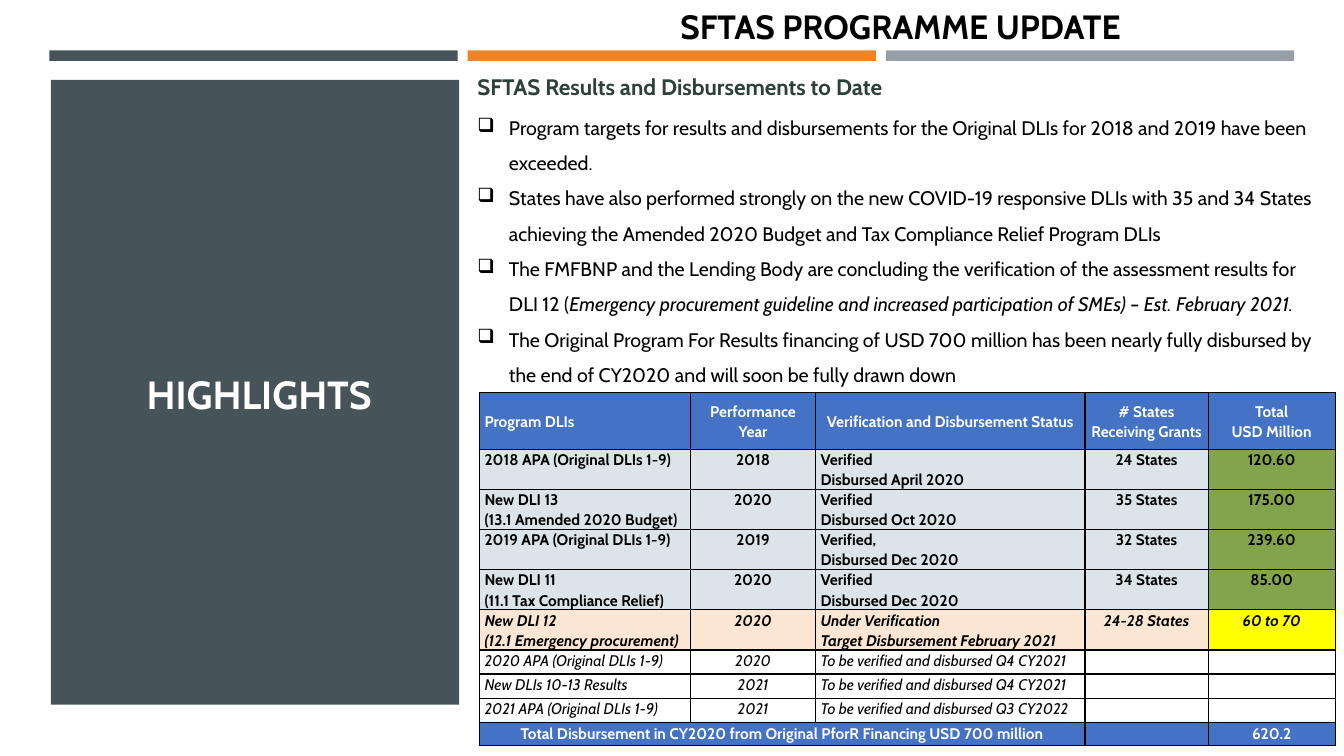
from lxml import etree
from pptx import Presentation
from pptx.dml.color import RGBColor
from pptx.enum.shapes import MSO_SHAPE
from pptx.enum.text import MSO_ANCHOR, PP_ALIGN
from pptx.oxml.ns import qn
from pptx.util import Pt

RECTANGLE = MSO_SHAPE.RECTANGLE
LEFT, CENTER, JUSTIFY = PP_ALIGN.LEFT, PP_ALIGN.CENTER, PP_ALIGN.JUSTIFY
TOP, MIDDLE = MSO_ANCHOR.TOP, MSO_ANCHOR.MIDDLE
FONT = "Cabin"
COLORS = {
    "slate": "465359", "orange": "ED8428", "gray": "969FA7",
    "white": "FFFFFF", "black": "000000", "heading": "2D4039",
    "blue": "4472C4", "pale": "DBE4E8", "green": "84A44B",
    "peach": "FBE6D4", "yellow": "FFFF00",
}


def style(paragraph, size, color, bold=False, italic=False, align=LEFT):
    paragraph.alignment = align
    font = paragraph.font
    font.name, font.size, font.bold, font.italic = FONT, Pt(size), bold, italic
    font.color.rgb = RGBColor.from_string(COLORS[color])


def add_text_frame(left, top, width, height, anchor=TOP):
    frame = slide.shapes.add_textbox(Pt(left), Pt(top), Pt(width), Pt(height)).text_frame
    frame.word_wrap = True
    frame.vertical_anchor = anchor
    return frame


prs = Presentation()
prs.slide_width, prs.slide_height = Pt(960), Pt(540)
slide = prs.slides.add_slide(prs.slide_layouts[6])

# Three accent bars and the side panel
BAR_STEP = 298.8
bars = [(35.3 + i * BAR_STEP, 36, 291.6, 7.5, color)
        for i, color in enumerate(["slate", "orange", "gray"])]
side_panel = (36.3, 57, 291.6, 446.4, "slate")
for left, top, width, height, color in bars + [side_panel]:
    block = slide.shapes.add_shape(RECTANGLE, Pt(left), Pt(top), Pt(width), Pt(height))
    block.shadow.inherit = False
    block.fill.solid()
    block.fill.fore_color.rgb = RGBColor.from_string(COLORS[color])
    block.line.fill.background()

# Titles
highlights = add_text_frame(63.4, 95, 243.4, 373, MIDDLE).paragraphs[0]
highlights.text = "HIGHLIGHTS"
style(highlights, 28, "white", bold=True, align=CENTER)

programme_title = add_text_frame(403.2, 0.7, 480, 36).paragraphs[0]
programme_title.text = "SFTAS PROGRAMME UPDATE"
style(programme_title, 24, "black", bold=True, align=CENTER)

results_heading = add_text_frame(334, 48.6, 384.5, 36).paragraphs[0]
results_heading.text = "SFTAS Results and Disbursements to Date"
results_heading.space_after = Pt(6)
style(results_heading, 16, "heading", bold=True, align=JUSTIFY)

# Results table: each row is (height, style, cells)
HEADER, DONE, PENDING, FUTURE, TOTAL = "header", "done", "pending", "future", "total"
# fill, fill of last column, text colour, bold, italic, anchor
ROW_STYLES = {
    HEADER: ("blue", "blue", "white", True, False, MIDDLE),
    DONE: ("pale", "green", "black", True, False, TOP),
    PENDING: ("peach", "yellow", "black", True, True, TOP),
    FUTURE: ("white", "white", "black", False, True, TOP),
    TOTAL: ("blue", "blue", "white", True, False, MIDDLE),
}
rows = [
    (40.4, HEADER, ["Program DLIs", "Performance Year", "Verification and Disbursement Status",
                    "# States Receiving Grants", "Total\nUSD Million"]),
    (28.7, DONE, ["2018 APA (Original DLIs 1-9)", "2018",
                  "Verified\nDisbursed April 2020", "24 States", "120.60"]),
    (28.7, DONE, ["New DLI 13\n(13.1 Amended 2020 Budget)", "2020",
                  "Verified\nDisbursed Oct 2020", "35 States", "175.00"]),
    (28.7, DONE, ["2019 APA (Original DLIs 1-9)", "2019",
                  "Verified,\nDisbursed Dec 2020", "32 States", "239.60"]),
    (28.7, DONE, ["New DLI 11\n(11.1 Tax Compliance Relief)", "2020",
                  "Verified\nDisbursed Dec 2020", "34 States", "85.00"]),
    (28.7, PENDING, ["New DLI 12\n(12.1 Emergency procurement)", "2020",
                     "Under Verification\nTarget Disbursement February 2021",
                     "24-28 States", "60 to 70"]),
    (17.2, FUTURE, ["2020 APA (Original DLIs 1-9)", "2020",
                    "To be verified and disbursed Q4 CY2021", "", ""]),
    (17.2, FUTURE, ["New DLIs 10-13 Results", "2021",
                    "To be verified and disbursed Q4 CY2021", "", ""]),
    (17.2, FUTURE, ["2021 APA (Original DLIs 1-9)", "2021",
                    "To be verified and disbursed Q3 CY2022", "", ""]),
    (16.5, TOTAL, ["Total Disbursement in CY2020 from Original PforR Financing USD 700 million",
                   "", "", "", "620.2"]),
]
column_widths = [150.8, 89.3, 192.4, 88.1, 90.7]
last_column = len(column_widths) - 1
results = slide.shapes.add_table(len(rows), len(column_widths), Pt(342.5), Pt(280.5),
                                 Pt(sum(column_widths)), Pt(sum(row[0] for row in rows))).table
results.first_row = results.horz_banding = False
for column, width in zip(results.columns, column_widths):
    column.width = Pt(width)

for r, (height, kind, texts) in enumerate(rows):
    results.rows[r].height = Pt(height)
    fill, last_fill, color, bold, italic, anchor = ROW_STYLES[kind]
    for c, text in enumerate(texts):
        cell = results.cell(r, c)
        cell.text = text
        cell.vertical_anchor = anchor
        cell.margin_left = cell.margin_right = Pt(3.6)
        cell.margin_top = cell.margin_bottom = 0
        centered = c in (1, 3, 4) or kind == TOTAL or (kind == HEADER and c == 2)
        for paragraph in cell.text_frame.paragraphs:
            paragraph.line_spacing = 1.07
            style(paragraph, 11, color, bold, italic, CENTER if centered else LEFT)
        # Borders come before the fill in the cell properties
        properties = cell._tc.get_or_add_tcPr()
        for side in ("a:lnL", "a:lnR", "a:lnT", "a:lnB"):
            border = etree.SubElement(properties, qn(side), w=str(Pt(1)))
            solid = etree.SubElement(border, qn("a:solidFill"))
            etree.SubElement(solid, qn("a:srgbClr"), val=COLORS["black"])
        cell.fill.solid()
        cell.fill.fore_color.rgb = RGBColor.from_string(
            COLORS[last_fill if c == last_column else fill])
total_row = len(rows) - 1
results.cell(total_row, 0).merge(results.cell(total_row, 2))

# Bulleted findings: each is (plain text, italic ending)
findings = [
    ("Program targets for results and disbursements for the Original DLIs for 2018 and 2019 "
     "have been exceeded.", ""),
    ("States have also performed strongly on the new COVID-19 responsive DLIs with 35 and 34 "
     "States achieving the Amended 2020 Budget and Tax Compliance Relief Program DLIs", ""),
    ("The FMFBNP and the Lending Body are concluding the verification of the assessment results "
     "for DLI 12 (",
     "Emergency procurement guideline and increased participation of SMEs) – Est. February 2021."),
    ("The Original Program For Results financing of USD 700 million has been nearly fully "
     "disbursed by the end of CY2020 and will soon be fully drawn down", ""),
]
findings_frame = add_text_frame(334, 70.8, 619.2, 208)
for i, (plain, emphasis) in enumerate(findings):
    finding = findings_frame.add_paragraph() if i else findings_frame.paragraphs[0]
    finding.add_run().text = plain
    if emphasis:
        ending = finding.add_run()
        ending.text = emphasis
        ending.font.italic = True
    finding.line_spacing = 1.5
    properties = finding._p.get_or_add_pPr()
    properties.set("marL", str(Pt(22.5)))
    properties.set("indent", str(Pt(-22.5)))
    etree.SubElement(properties, qn("a:buChar"), char="❑")
    style(finding, 14, "black")

prs.save("out.pptx")
